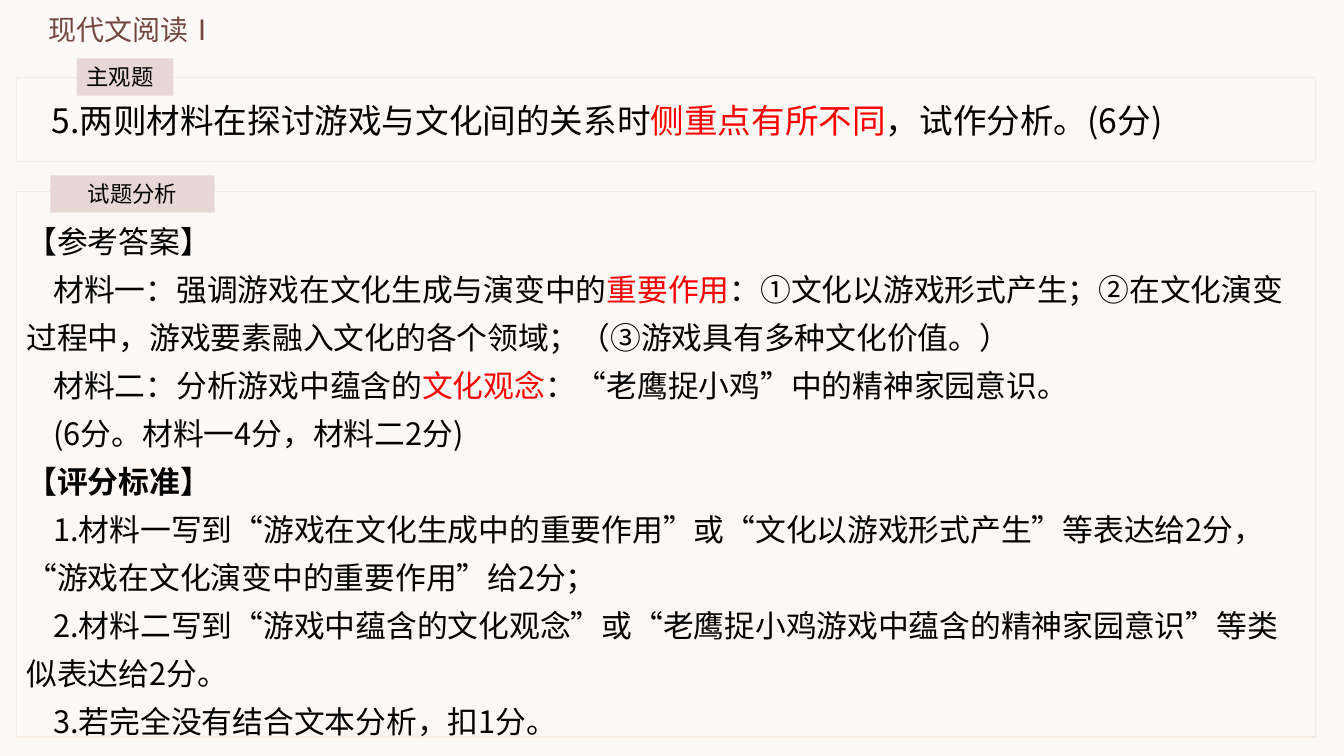
from pptx import Presentation
from pptx.dml.color import RGBColor
from pptx.enum import shapes, text
from pptx.oxml import ns
from pptx.util import Cm, Pt
from lxml import etree

SANS, ARIAL = "Noto Sans CJK SC", "Arial"
BLACK, RED, BROWN = "000000", "FF0000", "744841"
PAPER, FRAME, LABEL = "FCF9F7", "F7ECE5", "E7D7D5"
FIRST_INDENT = Cm(0.68)

# Answer paragraphs: (runs, is_heading, bold); a run is (text, colour)
ANSWER = [
    ([("【参考答案】", BLACK)], True, False),
    ([("材料一：强调游戏在文化生成与演变中的", BLACK), ("重要作用", RED),
      ("：①文化以游戏形式产生；②在文化演变过程中，游戏要素融入文化的各个领域；"
       "（③游戏具有多种文化价值。）", BLACK)], False, False),
    ([("材料二：分析游戏中蕴含的", BLACK), ("文化观念", RED),
      ("：“老鹰捉小鸡”中的精神家园意识。", BLACK)], False, False),
    ([("(6分。材料一4分，材料二2分)", BLACK)], False, False),
    ([("【评分标准】", BLACK)], True, True),
    ([("1.材料一写到“游戏在文化生成中的重要作用”或“文化以游戏形式产生”等表达给2分，"
       "“游戏在文化演变中的重要作用”给2分；", BLACK)], False, False),
    ([("2.材料二写到“游戏中蕴含的文化观念”或“老鹰捉小鸡游戏中蕴含的精神家园意识”"
       "等类似表达给2分。", BLACK)], False, False),
    ([("3.若完全没有结合文本分析，扣1分。", BLACK)], False, False),
]


def rgb(colour):
    return RGBColor.from_string(colour)


def add_run(p, words, size, colour, font=SANS, bold=False):
    r = p.add_run()
    r.text = words
    r.font.size, r.font.bold, r.font.name = Pt(size), bold, font
    r.font.color.rgb = rgb(colour)
    ea = etree.SubElement(r.font._element, ns.qn("a:ea"))
    ea.set("typeface", SANS)


def place(sp, left, top, width, height):
    sp.left, sp.top, sp.width, sp.height = map(Cm, (left, top, width, height))


def setup_frame(sp, anchor):
    tf = sp.text_frame
    tf.word_wrap = True
    tf.auto_size = text.MSO_AUTO_SIZE.NONE
    tf.vertical_anchor = anchor
    return tf


def set_indent(p, margin, first):
    pPr = p._p.get_or_add_pPr()
    pPr.set("marL", str(margin))
    pPr.set("indent", str(first))
    return pPr


def add_box(s, box, fill=None, line=None):
    sp = s.shapes.add_shape(shapes.MSO_SHAPE.RECTANGLE, *map(Cm, box))
    sp.shadow.inherit = False
    if fill:
        sp.fill.solid()
        sp.fill.fore_color.rgb = rgb(fill)
    else:
        sp.fill.background()
    if line:
        sp.line.color.rgb = rgb(line)
        sp.line.width = Pt(1)
    else:
        sp.line.fill.background()
    return sp


def add_label(s, box, words, align, font):
    sp = add_box(s, box, fill=LABEL)
    p = setup_frame(sp, text.MSO_ANCHOR.MIDDLE).paragraphs[0]
    p.alignment = align
    add_run(p, words, 16, BLACK, font)


def fill_title(sp):
    place(sp, 0.97, 0.18, 5.94, 1.12)
    p = setup_frame(sp, text.MSO_ANCHOR.MIDDLE).paragraphs[0]
    p.alignment = text.PP_ALIGN.LEFT
    add_run(p, "现代文阅读Ⅰ", 20, BROWN)


def add_question(s):
    sp = s.shapes.add_textbox(Cm(0.69), Cm(2.39), Cm(32.46), Cm(1.27))
    p = setup_frame(sp, text.MSO_ANCHOR.MIDDLE).paragraphs[0]
    p.alignment = text.PP_ALIGN.JUSTIFY
    set_indent(p, Cm(0.36), 0)
    for words, colour in [("5.两则材料在探讨游戏与文化间的关系时", BLACK),
                          ("侧重点有所不同", RED), ("，试作分析。(6分)", BLACK)]:
        add_run(p, words, 24, colour)


def fill_answer(sp):
    place(sp, 0.41, 5.13, 32.74, 13.64)
    tf = setup_frame(sp, text.MSO_ANCHOR.TOP)
    tf.margin_top = Cm(0.2)
    for i, (runs, heading, bold) in enumerate(ANSWER):
        p = tf.add_paragraph() if i else tf.paragraphs[0]
        p.alignment = text.PP_ALIGN.LEFT
        p.line_spacing = Pt(34.3)
        p.space_before = p.space_after = Pt(0)
        pPr = set_indent(p, 0, 0 if heading else FIRST_INDENT)
        etree.SubElement(pPr, ns.qn("a:buNone"))
        for words, colour in runs:
            add_run(p, words, 22, colour, ARIAL if heading and not bold else SANS, bold)


def main():
    prs = Presentation()
    prs.slide_width, prs.slide_height = Cm(33.87), Cm(19.05)
    s = prs.slides.add_slide(prs.slide_layouts[1])
    s.background.fill.solid()
    s.background.fill.fore_color.rgb = rgb(PAPER)

    # Heading
    fill_title(s.shapes.title)

    # Question
    add_box(s, (0.41, 1.96, 32.74, 2.11), line=FRAME)
    add_label(s, (1.93, 1.47, 2.44, 0.94), "主观题", text.PP_ALIGN.LEFT, SANS)
    add_question(s)

    # Answer and marking
    add_box(s, (0.41, 4.83, 32.74, 13.74), line=FRAME)
    add_label(s, (1.27, 4.42, 4.14, 0.94), "试题分析", text.PP_ALIGN.CENTER, ARIAL)
    body = s.placeholders[1]
    fill_answer(body)
    s.shapes._spTree.append(body._element)  # bring the text to the front

    prs.save("out.pptx")


if __name__ == "__main__":
    main()
